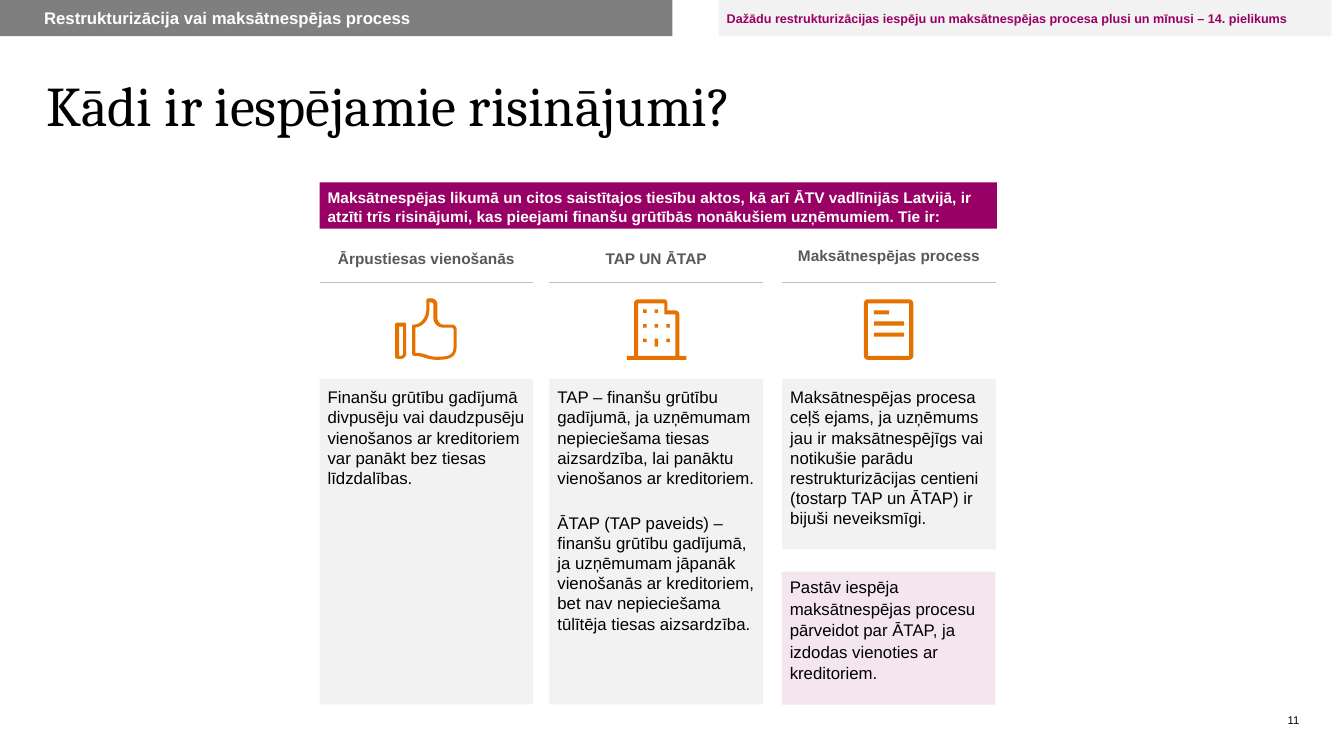
from dataclasses import dataclass

from lxml import etree
from pptx import Presentation
from pptx.dml.color import RGBColor
from pptx.enum.shapes import MSO_CONNECTOR, MSO_SHAPE
from pptx.enum.text import MSO_ANCHOR, MSO_AUTO_SIZE, PP_ALIGN
from pptx.oxml.ns import qn
from pptx.util import Pt

RECTANGLE = MSO_SHAPE.RECTANGLE
STRAIGHT = MSO_CONNECTOR.STRAIGHT
TOP, MIDDLE = MSO_ANCHOR.TOP, MSO_ANCHOR.MIDDLE
LEFT, CENTER, RIGHT = PP_ALIGN.LEFT, PP_ALIGN.CENTER, PP_ALIGN.RIGHT
NO_AUTOFIT = MSO_AUTO_SIZE.NONE

COLORS = {
    "black": "000000", "white": "FFFFFF", "plum": "990066", "orange": "E57100",
    "bar": "7F7F7F", "panel": "F2F2F2", "heading": "595959", "rule": "BFBFBF",
}
COLUMN_WIDTH = 152.64
PANEL_TOP = 270.72
RULE_Y = 201.6
ICON_UNIT = 0.72  # points per icon grid unit
CURVE_STEPS = 8

Contour = list[tuple[float, ...]]  # 2 numbers: a point; 6 numbers: a Bezier curve


@dataclass
class Block:
    """A text area, filled or not; lengths in points."""
    box: tuple[float, float, float, float]
    paragraphs: list[str]
    size: float
    color: str = "black"
    bold: bool = False
    fill: str | None = None
    opacity: int = 100
    insets: tuple[float, float, float, float] = (0, 0, 0, 0)
    anchor: MSO_ANCHOR = TOP
    align: PP_ALIGN = LEFT
    line_spacing: float = 1.0
    space_after: float = 0
    gap: float = 0
    font: str = "Arial"


@dataclass
class Column:
    left: float
    heading: str
    heading_top: float
    panel_height: float
    paragraphs: list[str]


@dataclass
class Icon:
    left: float
    top: float
    contours: list[Contour]


def rgb(name: str) -> RGBColor:
    return RGBColor.from_string(COLORS[name])


def write_text(shape, block: Block) -> None:
    frame = shape.text_frame
    frame.word_wrap = True
    frame.auto_size = NO_AUTOFIT
    frame.vertical_anchor = block.anchor
    (frame.margin_left, frame.margin_top,
     frame.margin_right, frame.margin_bottom) = map(Pt, block.insets)
    for index, text in enumerate(block.paragraphs):
        paragraph = frame.add_paragraph() if index else frame.paragraphs[0]
        paragraph.text = text
        paragraph.alignment = block.align
        paragraph.line_spacing = block.line_spacing
        paragraph.space_before = Pt(block.gap if index else 0)
        paragraph.space_after = Pt(block.space_after)
        font = paragraph.font
        font.name, font.size, font.bold = block.font, Pt(block.size), block.bold
        font.color.rgb = rgb(block.color)


def draw_block(slide, block: Block) -> None:
    place = map(Pt, block.box)
    if block.fill is None:
        shape = slide.shapes.add_textbox(*place)
    else:
        shape = slide.shapes.add_shape(RECTANGLE, *place)
        paint(shape, block.fill)
        if block.opacity < 100:
            color = shape.fill._xPr.find(qn("a:solidFill"))[0]
            etree.SubElement(color, qn("a:alpha"), val=str(block.opacity * 1000))
    write_text(shape, block)


def paint(shape, fill: str) -> None:
    shape.shadow.inherit = False
    shape.fill.solid()
    shape.fill.fore_color.rgb = rgb(fill)
    shape.line.fill.background()


def draw_rule(slide, left: float) -> None:
    rule = slide.shapes.add_connector(
        STRAIGHT, Pt(left), Pt(RULE_Y), Pt(left + COLUMN_WIDTH), Pt(RULE_Y))
    rule.line.color.rgb = rgb("rule")
    rule.line.width = Pt(0.25)
    etree.SubElement(rule._element.spPr, qn("a:effectLst"))


def flatten(contour: Contour) -> list[tuple[float, float]]:
    points = [contour[0]]
    for step in contour[1:]:
        if len(step) == 2:
            points.append(step)
            continue
        start, controls = points[-1], (step[:2], step[2:4], step[4:])
        for i in range(1, CURVE_STEPS + 1):
            t = i / CURVE_STEPS
            weights = ((1 - t) ** 3, 3 * t * (1 - t) ** 2, 3 * t * t * (1 - t), t ** 3)
            points.append(tuple(
                sum(w * p[axis] for w, p in zip(weights, (start, *controls)))
                for axis in (0, 1)))
    return points


def draw_icon(slide, icon: Icon) -> None:
    outlines = [[(Pt(icon.left + x * ICON_UNIT), Pt(icon.top + y * ICON_UNIT))
                 for x, y in flatten(contour)] for contour in icon.contours]
    builder = slide.shapes.build_freeform(*outlines[0][0], scale=1.0)
    for index, outline in enumerate(outlines):
        if index:
            builder.move_to(*outline[0])
        builder.add_line_segments(outline[1:], close=True)
    paint(builder.convert_to_shape(), "orange")


def box(x: float, y: float, width: float, height: float) -> Contour:
    return [(x, y), (x + width, y), (x + width, y + height), (x, y + height)]


THUMB = Icon(282.24, 213.12, [
    [(4, 57), (4, 28), (8, 28), (8, 55), (8, 55, 7, 57, 6, 57)],
    [(10, 24), (3, 24), (1, 24, 0, 25, 0, 26), (0, 58), (0, 59, 1, 60, 3, 60), (6, 60),
     (9, 60, 11, 57, 11, 55), (11, 26), (11, 25, 10, 24, 10, 24)],
    [(41, 58), (37, 58, 34, 57, 31, 56), (28, 55, 25, 54, 20, 54), (20, 29),
     (28, 28, 34, 21, 34, 11), (34, 4), (36, 4), (37, 4, 38, 5, 38, 6), (38, 20),
     (38, 25, 43, 29, 47, 29), (56, 29), (57, 29, 58, 30, 58, 31), (58, 48),
     (58, 56, 54, 58, 41, 58)],
    [(56, 26), (47, 26), (45, 26, 42, 23, 42, 20), (42, 6), (42, 3, 39, 0, 36, 0), (33, 0),
     (32, 0, 31, 1, 31, 2), (31, 11), (31, 18, 26, 26, 19, 26), (18, 26, 17, 26, 17, 27),
     (17, 55), (17, 57, 18, 57, 19, 57), (28, 57, 31, 61, 41, 61),
     (52, 61, 61, 60, 61, 48), (61, 31), (61, 28, 59, 26, 56, 26)],
])
WINDOWS = [box(16 + 11.5 * col, 10 + 14.5 * row, 3.5, 8 if (col, row) == (1, 2) else 3.5)
           for row in range(3) for col in range(3) if (col, row) != (2, 0)]
BUILDING = Icon(447.84, 213.84, [
    [(52, 56), (52, 15), (52, 13, 50, 11, 48, 11), (40, 11), (40, 4), (40, 2, 39, 0, 37, 0),
     (11, 0), (9, 0, 7, 2, 7, 4), (7, 56), (0, 56), (0, 60), (59, 60), (59, 56)],
    [(48, 56), (11, 56), (11, 4), (37, 4), (37, 15), (48, 15)],
    *WINDOWS,
])
DOCUMENT = Icon(617.04, 213.84, [
    [(45, 0), (4, 0), (2, 0, 0, 2, 0, 4), (0, 56), (0, 58, 2, 60, 4, 60), (45, 60),
     (47, 60, 49, 58, 49, 56), (49, 4), (49, 2, 47, 0, 45, 0)],
    box(4, 4, 41, 52),
    *[box(10, 11 + 11 * row, width, 4) for row, width in enumerate((15, 30, 30))],
])

COLUMNS = [
    Column(228.24, "Ārpustiesas vienošanās", 177.84, 232.56, [
        "Finanšu grūtību gadījumā divpusēju vai daudzpusēju vienošanos ar kreditoriem "
        "var panākt bez tiesas līdzdalības."]),
    Column(392.4, "TAP UN ĀTAP", 177.84, 232.56, [
        "TAP – finanšu grūtību gadījumā, ja uzņēmumam nepieciešama tiesas aizsardzība, "
        "lai panāktu vienošanos ar kreditoriem.",
        "ĀTAP (TAP paveids) – finanšu grūtību gadījumā, ja uzņēmumam jāpanāk vienošanās "
        "ar kreditoriem, bet nav nepieciešama tūlītēja tiesas aizsardzība."]),
    Column(558.72, "Maksātnespējas process", 175.68, 121.68, [
        "Maksātnespējas procesa ceļš ejams, ja uzņēmums jau ir maksātnespējīgs vai "
        "notikušie parādu restrukturizācijas centieni (tostarp TAP un ĀTAP) ir bijuši "
        "neveiksmīgi."]),
]

TITLE = Block((33.12, 25.92, 894.96, 103.68), ["Kādi ir iespējamie risinājumi?"], 40,
              anchor=MIDDLE, line_spacing=0.9, font="Cambria")
BLOCKS = [
    # Header bars
    Block((0, 0, 480.24, 25.92), ["Restrukturizācija vai maksātnespējas process"], 12,
          "white", True, "bar", insets=(31.5, 5.76, 7.2, 5.76), anchor=MIDDLE),
    Block((513.36, 0, 437.76, 25.92),
          ["Dažādu restrukturizācijas iespēju un maksātnespējas procesa plusi un mīnusi – "
           "14. pielikums"], 9, "plum", True, "panel",
          insets=(5.76, 3.6, 5.76, 3.6), anchor=MIDDLE),
    # Introduction
    Block((228.24, 130.32, 483.84, 33.12),
          ["Maksātnespējas likumā un citos saistītajos tiesību aktos, kā arī ĀTV vadlīnijās "
           "Latvijā, ir atzīti trīs risinājumi, kas pieejami finanšu grūtībās nonākušiem "
           "uzņēmumiem. Tie ir:"], 11, "white", True, "plum",
          insets=(5.76, 2.88, 5.76, 2.88), line_spacing=1.07, space_after=8),
    # Conversion note
    Block((558.36, 408.24, COLUMN_WIDTH, 95.04),
          ["Pastāv iespēja maksātnespējas procesu pārveidot par ĀTAP, ja izdodas vienoties "
           "ar kreditoriem."], 12, fill="plum", opacity=10,
          insets=(5.76, 2.88, 5.76, 2.88), line_spacing=1.07, space_after=8),
    # Page number
    Block((712.08, 509.76, 216, 9.36), ["11"], 8, anchor=MIDDLE, align=RIGHT),
]


def main() -> None:
    deck = Presentation()
    deck.slide_width, deck.slide_height = Pt(960), Pt(540)
    slide = deck.slides.add_slide(deck.slide_layouts[5])

    title = slide.shapes.title
    title.left, title.top, title.width, title.height = map(Pt, TITLE.box)
    write_text(title, TITLE)

    for block in BLOCKS:
        draw_block(slide, block)
    for column in COLUMNS:
        draw_block(slide, Block(
            (column.left, column.heading_top, COLUMN_WIDTH, 13.68), [column.heading], 11,
            "heading", True, align=CENTER, space_after=1.7))
        draw_rule(slide, column.left)
        draw_block(slide, Block(
            (column.left, PANEL_TOP, COLUMN_WIDTH, column.panel_height), column.paragraphs,
            12, fill="panel", insets=(5.76,) * 4, space_after=1.7, gap=16))
    for icon in (THUMB, BUILDING, DOCUMENT):
        draw_icon(slide, icon)
    deck.save("out.pptx")


if __name__ == "__main__":
    main()
